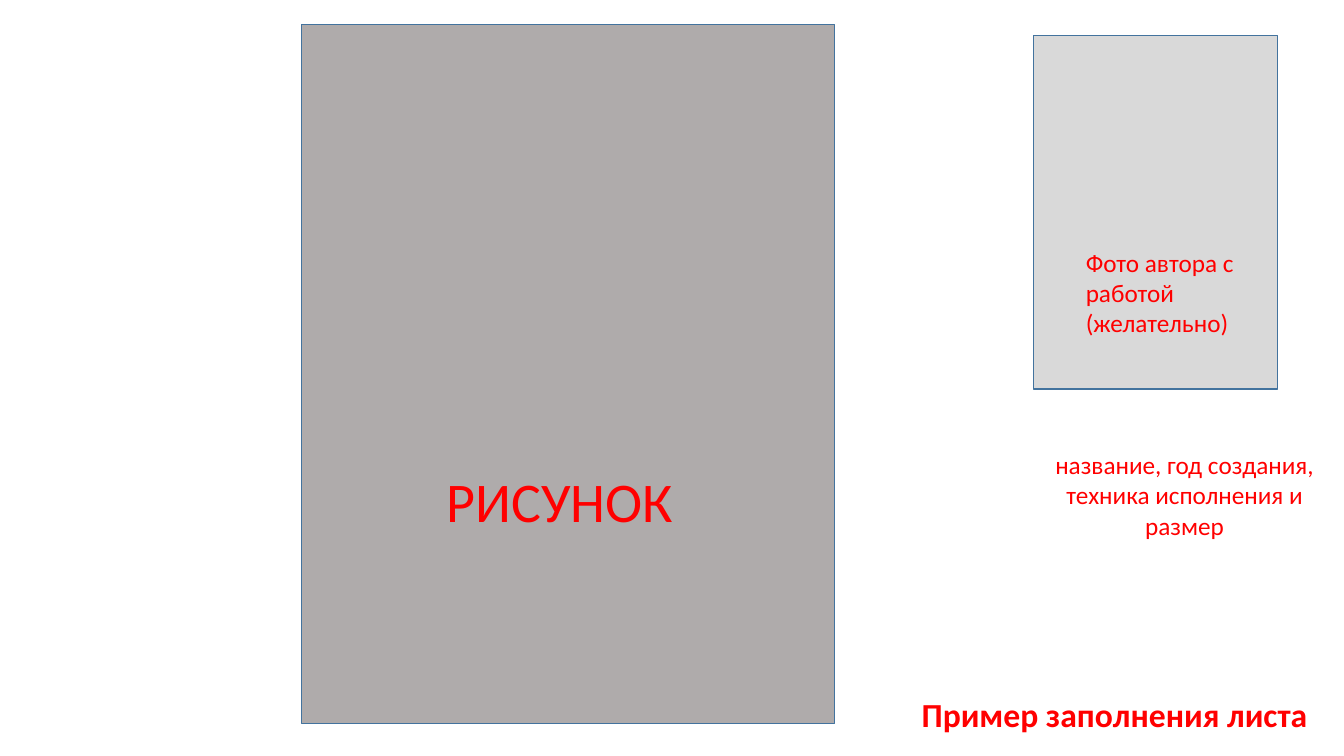
from dataclasses import dataclass

from pptx import Presentation
from pptx.dml.color import RGBColor
from pptx.enum.shapes import MSO_SHAPE
from pptx.enum.text import MSO_ANCHOR, MSO_AUTO_SIZE, PP_ALIGN
from pptx.util import Inches, Pt


@dataclass(frozen=True)
class Theme:
    font: str = "Calibri"
    text: str = "FF0000"
    outline: str = "43739E"
    artwork: str = "AFABAB"
    photo: str = "D9D9D9"
    label_size: int = 40
    title_size: int = 24
    body_size: int = 18


THEME = Theme()
WIDTH, HEIGHT = Inches(13.33), Inches(7.5)


def percent_box(left, top, width, height):
    return (int(WIDTH * left / 100), int(HEIGHT * top / 100),
            int(WIDTH * width / 100), int(HEIGHT * height / 100))


def add_frame(s, box, fill):
    sp = s.shapes.add_shape(MSO_SHAPE.RECTANGLE, *percent_box(*box))
    sp.shadow.inherit = False
    sp.fill.solid()
    sp.fill.fore_color.rgb = RGBColor.from_string(fill)
    sp.line.color.rgb = RGBColor.from_string(THEME.outline)
    sp.line.width = Pt(1)


def write_text(sp, text, size, align=PP_ALIGN.LEFT, bold=False):
    tf = sp.text_frame
    tf.word_wrap = True
    tf.auto_size = MSO_AUTO_SIZE.NONE
    tf.vertical_anchor = MSO_ANCHOR.TOP
    p = tf.paragraphs[0]
    p.alignment = align
    p.line_spacing = 1.0
    p.space_before = Pt(0)
    r = p.add_run()
    r.text = text
    r.font.name = THEME.font
    r.font.size = Pt(size)
    r.font.bold = bold
    r.font.color.rgb = RGBColor.from_string(THEME.text)


def add_label(s, box, text, size, align=PP_ALIGN.LEFT):
    sp = s.shapes.add_textbox(*percent_box(*box))
    write_text(sp, text, size, align)


def set_title(s, box, text):
    sp = s.shapes.title
    sp.left, sp.top, sp.width, sp.height = percent_box(*box)
    write_text(sp, text, THEME.title_size, bold=True)


def main():
    prs = Presentation()
    prs.slide_width, prs.slide_height = WIDTH, HEIGHT
    s = prs.slides.add_slide(prs.slide_layouts[5])

    add_frame(s, (22.43, 3.2, 39.68, 92.53), THEME.artwork)
    add_label(s, (32.48, 61.07, 35.71, 10.27), "РИСУНОК", THEME.label_size)
    add_frame(s, (76.89, 4.67, 18.15, 46.8), THEME.photo)
    add_label(s, (80.05, 32, 18.15, 13.47),
              "Фото автора с работой (желательно)", THEME.body_size)
    set_title(s, (67.82, 91.07, 31.73, 6.67), "Пример заполнения листа")
    add_label(s, (76.89, 58.8, 22.5, 13.47),
              "название, год создания, техника исполнения и размер",
              THEME.body_size, PP_ALIGN.CENTER)

    prs.save("out.pptx")


if __name__ == "__main__":
    main()
